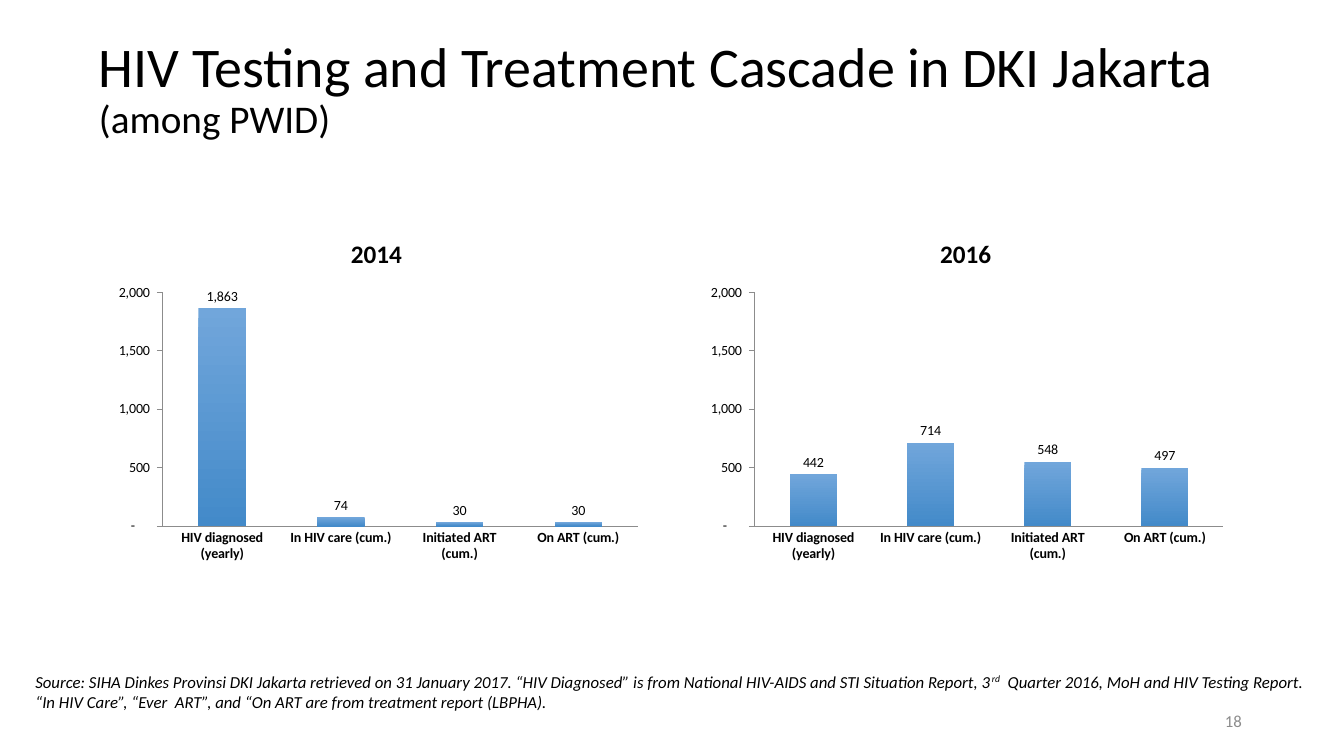
from dataclasses import dataclass

from lxml import etree
from pptx import Presentation
from pptx.chart.chart import Chart
from pptx.chart.data import CategoryChartData
from pptx.dml.color import RGBColor
from pptx.enum.chart import XL_CHART_TYPE, XL_LABEL_POSITION, XL_TICK_MARK
from pptx.enum.text import MSO_ANCHOR, MSO_AUTO_SIZE, PP_ALIGN
from pptx.oxml.ns import qn
from pptx.slide import Slide
from pptx.text.text import Font, TextFrame, _Paragraph, _Run
from pptx.util import Cm, Pt


@dataclass(frozen=True)
class Theme:
    font: str = "Calibri"
    text: str = "000000"
    muted: str = "8C8C8C"
    bar_top: str = "71A6DB"
    bar_bottom: str = "438AC9"
    title: int = 40
    subtitle: int = 28
    chart_title: int = 18
    note: int = 12
    label: int = 10


@dataclass(frozen=True)
class Box:
    left: float
    top: float
    width: float
    height: float

    def emu(self) -> tuple[Cm, Cm, Cm, Cm]:
        return Cm(self.left), Cm(self.top), Cm(self.width), Cm(self.height)


@dataclass(frozen=True)
class Cascade:
    year: str
    box: Box
    values: tuple[int, ...]


THEME = Theme()
STAGES = ("HIV diagnosed (yearly)", "In HIV care (cum.)", "Initiated ART (cum.)", "On ART (cum.)")
NUMBER_FORMAT = '_(* #,##0_);_(* \\(#,##0\\);_(* "-"??_);_('
PLOT_AREA = {"x": 0.107, "y": 0.208, "w": 0.874, "h": 0.67}
CASCADES = (
    Cascade("2014", Box(2.64, 5.54, 13.69, 8.79), (1863, 74, 30, 30)),
    Cascade("2016", Box(17.58, 5.54, 13.51, 8.79), (442, 714, 548, 497)),
)


def style(font: Font, size: int, color: str = THEME.text, bold: bool = False) -> None:
    font.name = THEME.font
    font.size = Pt(size)
    font.bold = bold
    font.color.rgb = RGBColor.from_string(color)


def add_run(p: _Paragraph, text: str, size: int, color: str = THEME.text) -> _Run:
    r = p.add_run()
    r.text = text
    style(r.font, size, color)
    return r


def add_title(s: Slide) -> None:
    sp = s.shapes.title
    sp.left, sp.top, sp.width, sp.height = Box(2.24, 0, 29.74, 4.55).emu()
    tf = sp.text_frame
    tf.auto_size = MSO_AUTO_SIZE.NONE
    tf.vertical_anchor = MSO_ANCHOR.MIDDLE
    p = tf.paragraphs[0]
    p.alignment = PP_ALIGN.LEFT
    p.line_spacing = 0.9
    add_run(p, "HIV Testing and Treatment Cascade in DKI Jakarta ", THEME.title)
    p.add_line_break()
    add_run(p, "(among PWID)", THEME.subtitle)


def add_text_box(s: Slide, box: Box) -> TextFrame:
    tf = s.shapes.add_textbox(*box.emu()).text_frame
    tf.word_wrap = True
    return tf


def add_source(s: Slide) -> None:
    p = add_text_box(s, Box(0.64, 16.79, 32.72, 1.27)).paragraphs[0]
    parts = (
        ("Source: SIHA Dinkes Provinsi DKI Jakarta retrieved on 31 January 2017. "
         "“HIV Diagnosed” is from National HIV-AIDS and STI Situation Report, 3", 0),
        ("rd", 30000),
        ("  Quarter 2016, MoH and HIV Testing Report. “In HIV Care”, “Ever  ART”, "
         "and “On ART are from treatment report (LBPHA).", 0),
    )
    for text, baseline in parts:
        r = add_run(p, text, THEME.note)
        r.font.italic = True
        if baseline:
            r.font._element.set("baseline", str(baseline))


def add_page_number(s: Slide) -> None:
    tf = add_text_box(s, Box(23.93, 17.65, 7.62, 1.02))
    tf.vertical_anchor = MSO_ANCHOR.MIDDLE
    p = tf.paragraphs[0]
    p.alignment = PP_ALIGN.RIGHT
    add_run(p, "18", THEME.note, THEME.muted)


def fix_plot_area(chart: Chart) -> None:
    plot_area = chart._chartSpace.find(f".//{qn('c:plotArea')}")
    for old in plot_area.findall(qn("c:layout")):
        plot_area.remove(old)
    layout = etree.Element(qn("c:layout"))
    manual = etree.SubElement(layout, qn("c:manualLayout"))
    settings = {"layoutTarget": "inner", "xMode": "edge", "yMode": "edge"} | PLOT_AREA
    for tag, value in settings.items():
        etree.SubElement(manual, qn(f"c:{tag}")).set("val", str(value))
    plot_area.insert(0, layout)


def add_cascade(s: Slide, cascade: Cascade) -> None:
    data = CategoryChartData()
    data.categories = STAGES
    data.add_series(cascade.year, cascade.values)
    chart = s.shapes.add_chart(XL_CHART_TYPE.COLUMN_CLUSTERED, *cascade.box.emu(), data).chart
    style(chart.font, THEME.label)
    chart.has_legend = False
    chart.has_title = True
    r = add_run(chart.chart_title.text_frame.paragraphs[0], cascade.year, THEME.chart_title)
    r.font.bold = True
    fix_plot_area(chart)

    for axis in (chart.category_axis, chart.value_axis):
        axis.has_major_gridlines = False
        axis.format.line.color.rgb = RGBColor.from_string(THEME.muted)
        axis.format.line.width = Pt(0.75)
    chart.category_axis.major_tick_mark = XL_TICK_MARK.NONE
    style(chart.category_axis.tick_labels.font, THEME.label, bold=True)
    axis = chart.value_axis
    axis.major_tick_mark = XL_TICK_MARK.OUTSIDE
    axis.minimum_scale, axis.maximum_scale, axis.major_unit = 0, 2000, 500
    axis.tick_labels.number_format = NUMBER_FORMAT
    axis.tick_labels.number_format_is_linked = False

    plot = chart.plots[0]
    plot.vary_by_categories = False
    plot.gap_width = 150
    plot.overlap = -25
    plot.has_data_labels = True
    labels = plot.data_labels
    labels.show_value = True
    labels.position = XL_LABEL_POSITION.OUTSIDE_END
    labels.number_format = NUMBER_FORMAT
    labels.number_format_is_linked = False
    style(labels.font, THEME.label)

    fill = plot.series[0].format.fill
    fill.gradient()
    fill.gradient_angle = 270
    for stop, color in zip(fill.gradient_stops, (THEME.bar_top, THEME.bar_bottom)):
        stop.color.rgb = RGBColor.from_string(color)


def main() -> None:
    prs = Presentation()
    prs.slide_width, prs.slide_height = Cm(33.87), Cm(19.05)
    s = prs.slides.add_slide(prs.slide_layouts[5])
    add_title(s)
    add_page_number(s)
    add_source(s)
    for cascade in CASCADES:
        add_cascade(s, cascade)
    prs.save("out.pptx")


if __name__ == "__main__":
    main()
